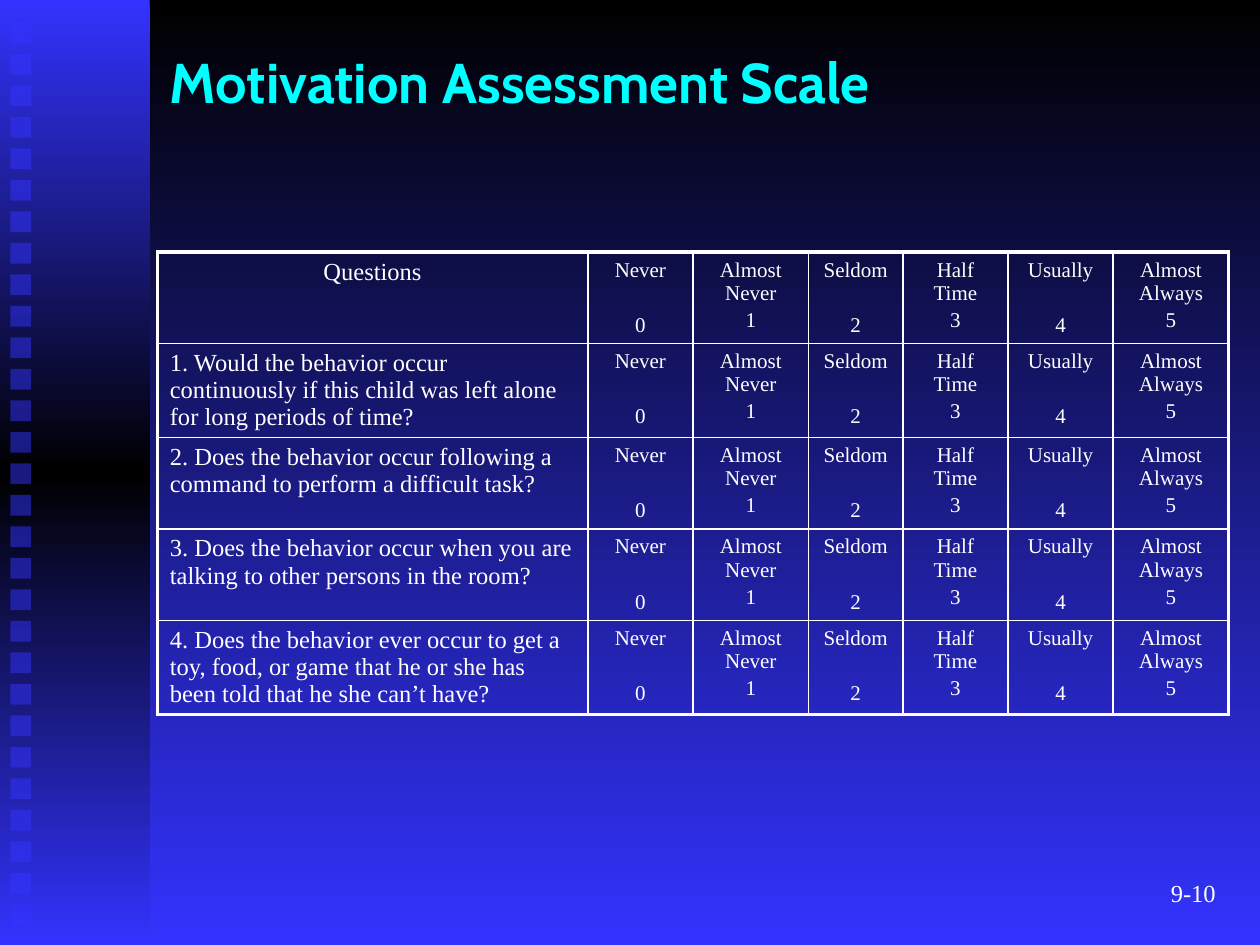
from collections import namedtuple
from copy import deepcopy
from dataclasses import dataclass

from lxml import etree
from pptx import Presentation
from pptx.dml.color import RGBColor
from pptx.enum.shapes import MSO_SHAPE
from pptx.enum.text import MSO_ANCHOR, MSO_AUTO_SIZE, PP_ALIGN
from pptx.oxml.ns import qn
from pptx.util import Cm, Pt

RECTANGLE = MSO_SHAPE.RECTANGLE
LEFT, CENTER, RIGHT = PP_ALIGN.LEFT, PP_ALIGN.CENTER, PP_ALIGN.RIGHT
MIDDLE = MSO_ANCHOR.MIDDLE
NO_AUTOFIT = MSO_AUTO_SIZE.NONE
TITLE_ONLY = 5

Box = namedtuple("Box", "left top width height")


@dataclass(frozen=True)
class Theme:
    blue: str = "3333FF"
    black: str = "000000"
    white: str = "FFFFFF"
    cyan: str = "00FFFF"
    title_font: str = "Cabin"
    body_font: str = "Times New Roman"
    title_size: int = 32
    text_size: int = 14
    scale_size: int = 12
    outer_line: float = 2.25
    inner_line: float = 1


THEME = Theme()

QUESTIONS = [
    "1. Would the behavior occur continuously if this child was left alone for long periods of time?",
    "2. Does the behavior occur following a command to perform a difficult task?",
    "3. Does the behavior occur when you are talking to other persons in the room?",
    "4. Does the behavior ever occur to get a toy, food, or game that he or she has been told "
    "that he she can’t have?",
]
RATINGS = ["Never", "Almost Never", "Seldom", "Half Time", "Usually", "Almost Always"]
COLUMN_WIDTHS = [8.68, 2.12, 2.33, 1.9, 2.12, 2.12, 2.33]
ROW_HEIGHT = 1.5
LINE_GAP = 2        # points above each paragraph
VALUE_DROP = 18.4   # points above the value under a one-line rating


def apply_format(target, values):
    for name, value in values.items():
        setattr(target, name, value)


def write_paragraph(paragraph, text, size, color=THEME.white, font=THEME.body_font,
                    bold=False, **layout):
    run = paragraph.add_run()
    run.text = text
    apply_format(run.font, {"name": font, "size": Pt(size), "bold": bold})
    run.font.color.rgb = RGBColor.from_string(color)
    apply_format(paragraph, layout)


def fill_downward(fill, element, colors):
    """Fill with evenly spaced colours from top to bottom."""
    fill.gradient()
    fill.gradient_angle = 270
    stop_list = element.find(".//" + qn("a:gsLst"))
    while len(stop_list) < len(colors):
        stop_list.append(deepcopy(stop_list[-1]))
    for index, (stop, color) in enumerate(zip(fill.gradient_stops, colors)):
        stop.position = index / (len(colors) - 1)
        stop.color.rgb = RGBColor.from_string(color)


def add_plain_rectangle(group, box):
    rectangle = group.shapes.add_shape(RECTANGLE, *box)
    rectangle.shadow.inherit = False
    rectangle.line.fill.background()
    return rectangle


def add_sidebar(slide, box, square_count=29):
    """Build the band with its squares and place it on the slide's layout."""
    sidebar = slide.shapes.add_group_shape()
    band = add_plain_rectangle(sidebar, box)
    fill_downward(band.fill, band.element, [THEME.blue, THEME.black, THEME.blue])
    side = Cm(0.42)
    pitch = box.height // (square_count + 1)
    for index in range(square_count):
        square = add_plain_rectangle(sidebar, Box(
            box.left + Cm(0.21), box.top + Cm(0.45) + index * pitch, side, side))
        square.fill.solid()
        square.fill.fore_color.rgb = RGBColor.from_string(THEME.blue)
        color = square.element.find(".//" + qn("a:srgbClr"))
        etree.SubElement(color, qn("a:alpha"), val="50000")
    layout_tree = slide.slide_layout.element.find(".//" + qn("p:spTree"))
    layout_tree.insert(2, sidebar.element)


def add_title(slide, box, text):
    title = slide.shapes.title
    apply_format(title, box._asdict())
    apply_format(title.text_frame, {"vertical_anchor": MIDDLE, "auto_size": NO_AUTOFIT,
                                    "word_wrap": True})
    write_paragraph(title.text_frame.paragraphs[0], text, THEME.title_size, THEME.cyan,
                    THEME.title_font, bold=True, alignment=LEFT)


def draw_borders(cell, widths):
    """Draw the cell's edges; widths are points for left, right, top and bottom."""
    properties = cell._tc.get_or_add_tcPr()
    for edge, width in zip("LRTB", widths):
        line = etree.SubElement(properties, qn("a:ln" + edge), w=str(Pt(width)))
        fill = etree.SubElement(line, qn("a:solidFill"))
        etree.SubElement(fill, qn("a:srgbClr"), val=THEME.white)


def write_rating(cell, value):
    label = RATINGS[value]
    one_line = " " not in label
    frame = cell.text_frame
    write_paragraph(frame.paragraphs[0], label, THEME.scale_size, alignment=CENTER,
                    space_before=Pt(LINE_GAP))
    write_paragraph(frame.add_paragraph(), str(value), THEME.scale_size, alignment=CENTER,
                    space_before=Pt(VALUE_DROP if one_line else LINE_GAP))


def add_scale_table(slide, box):
    row_labels = ["Questions"] + QUESTIONS
    last_row, last_column = len(row_labels) - 1, len(RATINGS)
    table = slide.shapes.add_table(last_row + 1, last_column + 1, *box).table
    apply_format(table, {"first_row": False, "horz_banding": False})
    for column, width in zip(table.columns, COLUMN_WIDTHS):
        column.width = Cm(width)
    for r, label in enumerate(row_labels):
        table.rows[r].height = Cm(ROW_HEIGHT)
        for c in range(last_column + 1):
            cell = table.cell(r, c)
            on_outside = (c == 0, c == last_column, r == 0, r == last_row)
            draw_borders(cell, [THEME.outer_line if outside else THEME.inner_line
                                for outside in on_outside])
            cell.fill.background()
            if c == 0:
                write_paragraph(cell.text_frame.paragraphs[0], label, THEME.text_size,
                                alignment=CENTER if r == 0 else LEFT,
                                space_before=Pt(LINE_GAP))
            else:
                write_rating(cell, c - 1)


def add_page_number(slide, box, text):
    frame = slide.shapes.add_textbox(*box).text_frame
    apply_format(frame, {"word_wrap": True, "vertical_anchor": MIDDLE})
    write_paragraph(frame.paragraphs[0], text, THEME.text_size, alignment=RIGHT)


def main():
    deck = Presentation()
    apply_format(deck, {"slide_width": Cm(25.4), "slide_height": Cm(19.05)})
    slide = deck.slides.add_slide(deck.slide_layouts[TITLE_ONLY])
    fill_downward(slide.background.fill, slide.element, [THEME.black, THEME.blue])
    left, width = Cm(3.17), Cm(21.6)
    add_sidebar(slide, Box(0, 0, Cm(3.02), deck.slide_height))
    add_title(slide, Box(left, Cm(0.64), width, Cm(2)), "Motivation Assessment Scale")
    add_scale_table(slide, Box(left, Cm(5.08), width, Cm(7.5)))
    add_page_number(slide, Box(Cm(19.48), Cm(17.36), Cm(5.28), Cm(1.27)), "9-10")
    deck.save("out.pptx")


if __name__ == "__main__":
    main()
